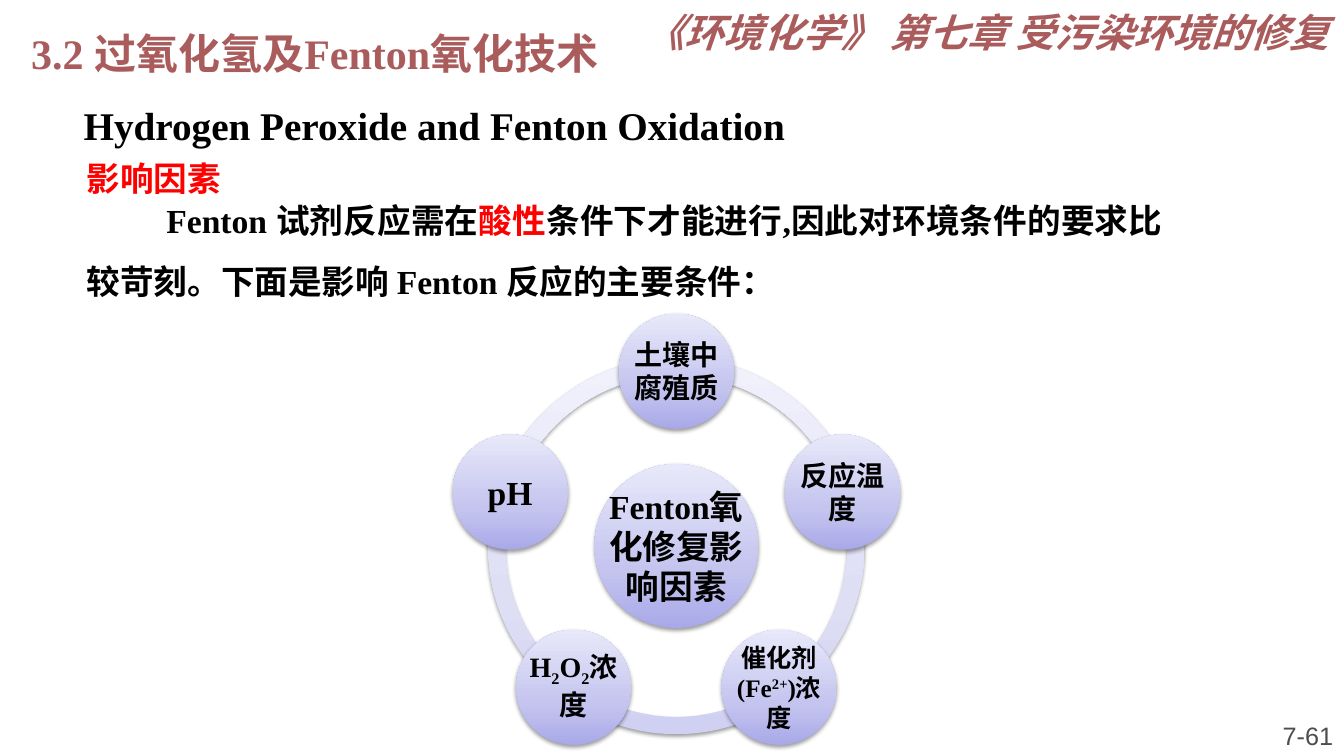
from math import cos, radians, sin

from pptx import Presentation
from pptx.dml.color import RGBColor
from pptx.enum.shapes import MSO_SHAPE
from pptx.enum.text import MSO_ANCHOR, MSO_AUTO_SIZE, PP_ALIGN
from pptx.oxml import parse_xml
from pptx.oxml.ns import nsdecls
from pptx.util import Inches, Pt

ARC, OVAL = MSO_SHAPE.BLOCK_ARC, MSO_SHAPE.OVAL
TOP, MID, LOW = MSO_ANCHOR.TOP, MSO_ANCHOR.MIDDLE, MSO_ANCHOR.BOTTOM
LEFT, RIGHT = PP_ALIGN.LEFT, PP_ALIGN.RIGHT
JUST, MIDST = PP_ALIGN.JUSTIFY, PP_ALIGN.CENTER
FIXED = MSO_AUTO_SIZE.NONE

THEME = {
    "rose": "AA5C5C", "red": "FF0000", "black": "000000", "gray": "4D4D4D",
    "ball": ("A9A9E9", "C4C4EF", "E8E8FA"),
    "ring": ("D0D0F2", "DEDEF5", "F1F1FC"),
    "serif": "Times New Roman", "sans": "Arial", "han": "Noto Sans CJK SC",
    "head": 30, "sub": 28, "text": 24, "node": 20, "small": 18,
}

# Square grid: 160 columns by 90 rows
deck = Presentation()
deck.slide_width, deck.slide_height = Inches(13.33), Inches(7.5)
CELL = deck.slide_height / 90
slide = deck.slides.add_slide(deck.slide_layouts[1])
shapes = slide.shapes


def write(box, rows, align=LEFT, anchor=TOP, pad=None):
    """Fill a box; a row is (leading, margin, indent, runs)."""
    frame = box.text_frame
    form = {"word_wrap": True, "auto_size": FIXED, "vertical_anchor": anchor}
    if pad is not None:
        form.update({"margin_" + side: pad
                     for side in ("left", "right", "top", "bottom")})
    for key, val in form.items():
        setattr(frame, key, val)
    for num, (lead, margin, indent, runs) in enumerate(rows):
        para = frame.add_paragraph() if num else frame.paragraphs[0]
        props = para._p.get_or_add_pPr()
        props.set("marL", str(Inches(margin)))
        props.set("indent", str(Inches(indent)))
        props.append(parse_xml(f"<a:buNone {nsdecls('a')}/>"))
        rules = {"alignment": align, "line_spacing": Pt(lead),
                 "space_before": Pt(0), "space_after": Pt(0)}
        for key, val in rules.items():
            setattr(para, key, val)
        for text, size, tint, face, *shift in runs:
            run = para.add_run()
            run.text = text
            look = {"size": Pt(THEME[size]), "name": THEME[face],
                    "bold": face != "sans"}
            for key, val in look.items():
                setattr(run.font, key, val)
            run.font.color.rgb = RGBColor.from_string(THEME[tint])
            marks = run._r.get_or_add_rPr()
            marks.append(parse_xml(
                f'<a:ea {nsdecls("a")} typeface="{THEME["han"]}"/>'))
            if shift:
                marks.set("baseline", str(shift[0] * 1000))


def paint(shape, tints):
    """Give a shape an upward gradient and a soft shadow."""
    shape.line.fill.background()
    stops = "".join(
        f'<a:gs pos="{pos}000"><a:srgbClr val="{tint}"/></a:gs>'
        for pos, tint in zip((0, 35, 100), tints))
    props = shape._element.spPr
    props.prstGeom.addnext(parse_xml(
        f'<a:gradFill {nsdecls("a")} rotWithShape="1"><a:gsLst>{stops}</a:gsLst>'
        '<a:lin ang="16200000" scaled="0"/></a:gradFill>'))
    props.append(parse_xml(
        f'<a:effectLst {nsdecls("a")}><a:outerShdw blurRad="{Pt(3.1)}" '
        f'dist="{Pt(1.6)}" dir="5400000" rotWithShape="0">'
        '<a:srgbClr val="000000"><a:alpha val="38000"/></a:srgbClr>'
        '</a:outerShdw></a:effectLst>'))


# Heading, body, topic, chapter and page number
title, body = shapes.title, slide.placeholders[1]
topic, chap, page = [shapes.add_textbox(0, 0, 0, 0) for _ in range(3)]
places = (
    (title, 2.52, -0.72, 151.8, 19.32),
    (body, 9.12, 20.64, 130.44, 15.72),
    (topic, 9.12, 15.72, 47.16, 8.52),
    (chap, 63.96, 0, 95.4, 6.84),
    (page, 134.76, 83.76, 25.08, 6.24),
)
for box, *spot in places:
    for key, val in zip(("left", "top", "width", "height"), spot):
        setattr(box, key, round(val * CELL))

write(title, [
    (56, 0.5, -0.5, [("3.2 ", "head", "rose", "serif"),
                     ("过氧化氢及", "head", "rose", "han"),
                     ("Fenton", "head", "rose", "serif"),
                     ("氧化技术", "head", "rose", "han")]),
    (51, 0.52, 0, [("Hydrogen Peroxide and Fenton Oxidation",
                    "sub", "black", "serif")]),
])
write(body, [(44, 0, 0.79, [
    ("Fenton 试剂反应需在", "text", "black", "serif"),
    ("酸性", "text", "red", "serif"),
    ("条件下才能进行,因此对环境条件的要求比较苛刻。"
     "下面是影响 Fenton 反应的主要条件：", "text", "black", "serif"),
])], JUST)
write(topic, [(44, 0, 0, [("影响因素", "text", "red", "serif")])])
write(chap, [(36, 0, 0, [("《环境化学》 第七章 受污染环境的修复",
                          "sub", "rose", "serif")])], RIGHT)
chap.text_frame.paragraphs[0].runs[0].font.italic = True
write(page, [(21, 0, 0, [("7-61", "small", "gray", "sans")])], RIGHT, LOW)

# Ring of five arcs
MIDX, MIDY, RING, ORBIT = 80.5, 65, 22.4, 20.8
STEP = 360 / 5
for num in range(5):
    arc = shapes.add_shape(ARC, *[round(val * CELL) for val in (
        MIDX - RING, MIDY - RING, 2 * RING, 2 * RING)])
    # The angle unit of an adjustment is 0.6 per degree
    ends = [(270 + STEP * (num + end)) % 360 * 0.6 for end in (0, 1)]
    for key, val in enumerate((*ends, 0.046)):
        arc.adjustments[key] = val
    paint(arc, THEME["ring"])

# Hub, then the factors clockwise from the top
balls = (
    ("text", "serif", [("Fenton",), ("氧化修复影响因素",)]),
    ("node", "han", [("土壤中腐殖质",)]),
    ("node", "han", [("反应温度",)]),
    ("small", "serif", [("催化剂(Fe",), ("2+", 30), (")浓度",)]),
    ("node", "serif", [("H",), ("2", -25), ("O",), ("2", -25), ("浓度",)]),
    ("text", "serif", [("pH",)]),
)
for num, (size, face, parts) in enumerate(balls):
    wide, reach = (13.7, ORBIT) if num else (19.5, 0)
    turn = radians(STEP * (num - 1) - 90)
    spot = [round(val * CELL) for val in (
        MIDX + reach * cos(turn) - wide / 2,
        MIDY + reach * sin(turn) - wide / 2, wide, wide)]
    paint(shapes.add_shape(OVAL, *spot), THEME["ball"])
    runs = [(text, size, "black", face, *shift) for text, *shift in parts]
    write(shapes.add_textbox(*spot), [(round(THEME[size] * 1.19, 1), 0, 0, runs)],
          MIDST, MID, Inches(0.03))

deck.save("out.pptx")
